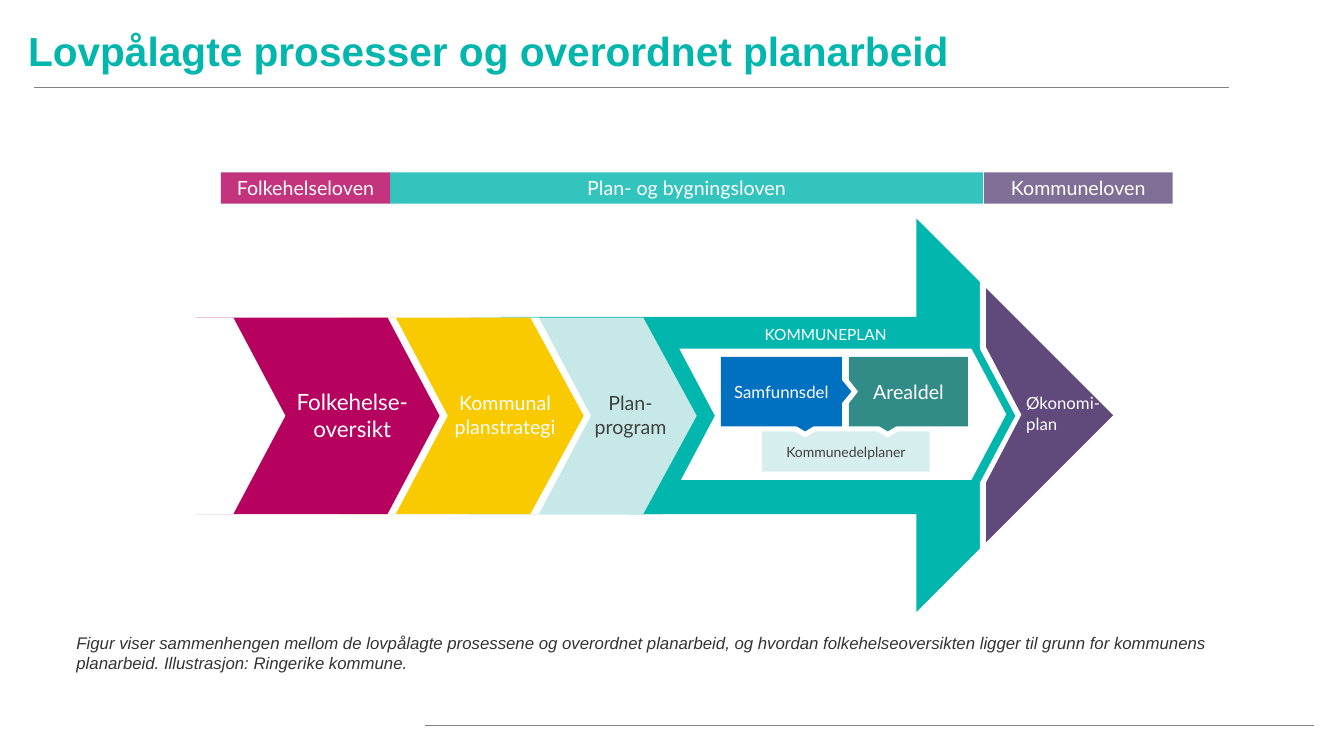
from lxml.etree import SubElement
from pptx import Presentation
from pptx.dml.color import RGBColor
from pptx.enum.shapes import MSO_CONNECTOR, MSO_SHAPE
from pptx.enum.text import MSO_ANCHOR, PP_ALIGN
from pptx.oxml.ns import qn
from pptx.util import Inches, Pt

THEME = dict(
    teal="01B6AD", magenta="B6015E", yellow="FACA00", purple="604A7B",
    blue="0070C0", green="318B87", mint="C6E9E8", pale="D6EEEE",
    white="FFFFFF", dark="404040", ink="333333", rule="808080",
    heading=29, large=16, medium=14, small=12, caps=11, tiny=10,
    plain="Arial", figure="Lato",
)

deck = Presentation()
deck.slide_width, deck.slide_height = Inches(13.33), Inches(7.5)
page = deck.slides.add_slide(deck.slide_layouts[6])
COLUMN = deck.slide_width / 1333
ROW = deck.slide_height / 750

PLATE, TRIANGLE = MSO_SHAPE.PENTAGON, MSO_SHAPE.ISOSCELES_TRIANGLE
BLOCK, PANEL = MSO_SHAPE.RECTANGLE, MSO_SHAPE.ROUNDED_RECTANGLE


def draw(kind, left, top, width, height, fill=None, bend=None, turn=0, opacity=None):
    place = (round(left * COLUMN), round(top * ROW), round(width * COLUMN), round(height * ROW))
    if kind is None:
        return page.shapes.add_textbox(*place)
    box = page.shapes.add_shape(kind, *place)
    box.shadow.inherit = False
    box.line.fill.background()
    box.rotation = turn
    if bend is not None:
        box.adjustments[0] = bend
    if fill is None:
        box.fill.background()
    else:
        box.fill.solid()
        box.fill.fore_color.rgb = RGBColor.from_string(THEME[fill])
    if opacity:
        color = box._element.spPr.find(qn("a:solidFill"))[0]
        SubElement(color, qn("a:alpha")).set("val", str(opacity * 1000))
    return box


def write(box, text, size="medium", color="white", face="figure", bold=False,
          italic=False, align=PP_ALIGN.CENTER, anchor=MSO_ANCHOR.MIDDLE):
    frame = box.text_frame
    frame.word_wrap = True
    frame.vertical_anchor = anchor
    para = frame.paragraphs[0]
    para.text = text
    para.alignment = align
    for span in para.runs:
        span.font.name = THEME[face]
        span.font.size = Pt(THEME[size])
        span.font.bold, span.font.italic = bold, italic
        span.font.color.rgb = RGBColor.from_string(THEME[color])


for start, end, row, weight in [(34, 1219, 87, 0.5), (1303, 422, 720, 0.75)]:
    line = page.shapes.add_connector(
        MSO_CONNECTOR.STRAIGHT, round(start * COLUMN), round(row * ROW),
        round(end * COLUMN), round(row * ROW))
    line.line.width = Pt(weight)
    line.line.color.rgb = RGBColor.from_string(THEME["rule"])
    SubElement(line._element.spPr, qn("a:effectLst"))

write(draw(None, 18, 22, 1124, 56), "Lovpålagte prosesser og overordnet planarbeid",
      size="heading", color="teal", face="plain", bold=True, align=PP_ALIGN.LEFT)
write(draw(None, 66, 623, 1200, 73),
      "Figur viser sammenhengen mellom de lovpålagte prosessene og overordnet planarbeid, "
      "og hvordan folkehelseoversikten ligger til grunn for kommunens planarbeid. "
      "Illustrasjon: Ringerike kommune.",
      size="small", color="ink", face="plain", italic=True,
      align=PP_ALIGN.LEFT, anchor=MSO_ANCHOR.TOP)

draw(MSO_SHAPE.RIGHT_ARROW, 497, 217, 607, 390, "teal")
draw(BLOCK, 995, 270, 132, 280, "white")
draw(BLOCK, 972, 248, 27, 364, "white")

outline = page.shapes.build_freeform(978, 286, scale=(COLUMN, ROW))
outline.add_line_segments([(1104, 412), (978, 538)], close=True)
economy = outline.convert_to_shape()
economy.shadow.inherit = False
economy.line.fill.background()
economy.fill.solid()
economy.fill.fore_color.rgb = RGBColor.from_string(THEME["purple"])

draw(TRIANGLE, 919, 392, 149, 39, "white", turn=90)
draw(PLATE, 624, 315, 383, 195, "teal", bend=0.265)
draw(PLATE, 667, 346, 331, 130, "white", bend=0.265)

for left, top, width, height, fill, text, size, color in [
    (715, 354, 120, 69, "blue", "Samfunnsdel", "small", "white"),
    (842, 354, 118, 69, "green", "Arealdel", "medium", "white"),
    (756, 428, 166, 40, "pale", "Kommunedelplaner", "tiny", "dark"),
]:
    write(draw(PANEL, left, top, width, height, fill, bend=0), text, size=size, color=color)

write(draw(None, 1008, 358, 101, 104), "Økonomi-plan", size="small", align=PP_ALIGN.LEFT)
write(draw(None, 681, 318, 276, 27), "KOMMUNEPLAN", size="caps")

for left, width, fill, text in [
    (219, 168, "magenta", "Folkehelseloven"),
    (387, 588, "teal", "Plan- og bygningsloven"),
    (976, 187, "purple", "Kommuneloven"),
]:
    write(draw(BLOCK, left, 171, width, 31, fill, opacity=80), text)

for left, fill in [(774, "blue"), (856, "green")]:
    draw(TRIANGLE, left + 8, 424, 33, 10, "white", turn=180)
    draw(TRIANGLE, left, 413, 49, 15, fill, turn=180)
draw(TRIANGLE, 828, 382, 33, 13, "white", turn=90)
draw(TRIANGLE, 819, 381, 36, 15, "blue", turn=90)

for left, width, fill, bend in [
    (466, 243, "teal", 0.265),
    (450, 241, "mint", 0.272),
    (342, 244, "white", 0.265),
    (338, 241, "yellow", 0.272),
    (202, 242, "white", 0.265),
    (194, 242, "magenta", 0.265),
    (41, 242, "white", 0.265),
]:
    draw(PLATE, left, 315, width, 195, fill, bend=bend)

for left, width, text, size, color in [
    (436, 130, "Kommunal planstrategi", "medium", "white"),
    (248, 203, "Folkehelse-\noversikt", "large", "white"),
    (562, 127, "Plan-\nprogram", "medium", "dark"),
]:
    write(draw(PANEL, left, 371, width, 81, bend=0.04), text, size=size, color=color)

deck.save("out.pptx")
